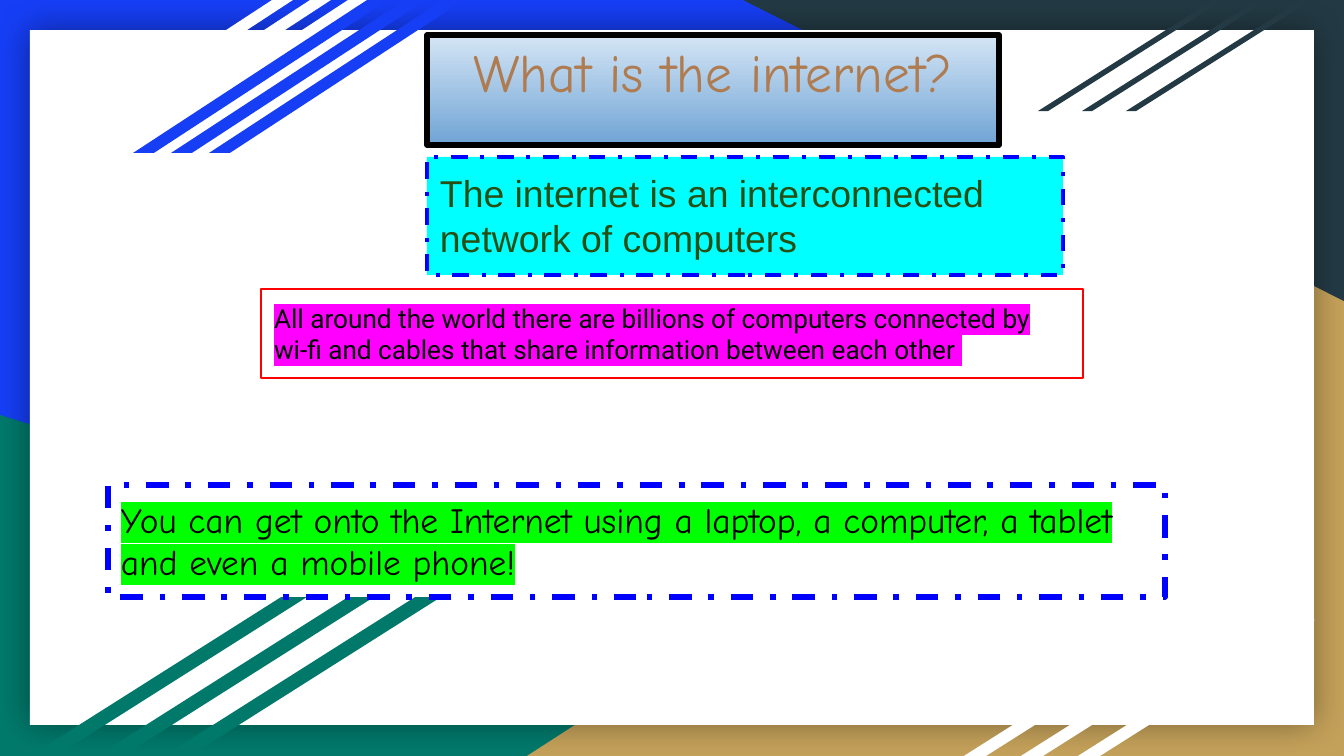
from lxml.etree import SubElement
from pptx import Presentation
from pptx.dml.color import RGBColor as Rgb
from pptx.enum.dml import MSO_LINE as Dash
from pptx.enum.shapes import MSO_SHAPE as Kind
from pptx.enum.text import MSO_ANCHOR as Anchor, MSO_AUTO_SIZE as Fit, PP_ALIGN as Align
from pptx.oxml.ns import qn
from pptx.util import Emu, Pt

HUE = {
    "blue": "163EF5", "green": "00796B", "gold": "C4A15A", "slate": "233A44",
    "white": "FFFFFF", "black": "000000", "sky": "D4E5F5", "steel": "70A4D5",
    "brown": "AF7B51", "cyan": "00FFFF", "navy": "0000FF", "moss": "274E13",
    "red": "FF0000", "pink": "FF00FF", "lime": "00FF00",
}
CORNERS = [
    ((0, 415, 1083, 341), "green", 0, False),
    ((527, 228, 817, 528), "gold", 0, True),
    ((743, 0, 601, 301), "slate", 180, False),
]
PANEL = (30, 30, 1284, 695)
STRIPES = [
    ((38, 0, 255, 153), 38, 1.53, "white"),
    ((133, 0, 255, 153), 38, 1.53, "blue"),
    ((1038, 1, 184, 110), 44, 1.58, "slate"),
    ((964, 620, 237, 136), 57, 1.58, "white"),
    ((30, 597, 277, 159), 67, 1.58, "green"),
]
NOTES = [
    dict(text="What is the internet?", box=(427, 35, 572, 110),
         fill=("sky", "steel"), line=("black", 3, None),
         font=dict(name="Comic Neue", size=Pt(28.7)), hue="brown", mark=None,
         para=dict(alignment=Align.CENTER, line_spacing=0.8),
         frame=dict(vertical_anchor=Anchor.MIDDLE, margin_bottom=38)),
    dict(text="The internet is an interconnected network of computers",
         box=(427, 157, 636, 118),
         fill=("cyan",), line=("navy", 2.25, Dash.DASH_DOT),
         font=dict(name="Arial", size=Pt(20)), hue="moss", mark=None),
    dict(text="All around the world there are billions of computers connected by "
              "wi-fi and cables that share information between each other ",
         box=(261, 289, 822, 89),
         fill=(), line=("red", 0.75, None),
         font=dict(name="Roboto", size=Pt(14)), hue="black", mark="pink"),
    dict(text="You can get onto the Internet using a laptop, a computer, a tablet "
              "and even a mobile phone!",
         box=(108, 485, 1057, 112),
         fill=(), line=("navy", 3, Dash.DASH_DOT),
         font=dict(name="Comic Neue", size=Pt(19)), hue="black", mark="lime"),
]
PAD = 13


def px(n):
    return Emu(round(n * 914400 / 134.4))


def rgb(hue):
    return Rgb.from_string(HUE[hue])


def assign(part, vals):
    for key, val in vals.items():
        setattr(part, key, val)


def paint(fill, hues):
    if not hues:
        fill.background()
    elif len(hues) == 1:
        fill.solid()
        fill.fore_color.rgb = rgb(hues[0])
    else:
        fill.gradient()
        fill.gradient_angle = 270
        for stop, hue, pos in zip(fill.gradient_stops, hues, (0, 1)):
            stop.color.rgb = rgb(hue)
            stop.position = pos


def add(kind, box, hues):
    shape = slide.shapes.add_shape(kind, *map(px, box))
    shape.shadow.inherit = False
    paint(shape.fill, hues)
    shape.line.fill.background()
    return shape


def shade(shape):
    glow = SubElement(shape.element.spPr.find(qn("a:effectLst")), qn("a:outerShdw"),
                      blurRad=str(Pt(18)), dist="0", dir="0", algn="ctr", rotWithShape="0")
    tint = SubElement(glow, qn("a:srgbClr"), val=HUE["black"])
    SubElement(tint, qn("a:alpha"), val="40000")


def mark(run, hue):
    props = run.font.fill._xPr
    light = SubElement(props, qn("a:highlight"))
    SubElement(light, qn("a:srgbClr"), val=HUE[hue])
    props.find(qn("a:solidFill")).addnext(light)


def write(note):
    shape = add(Kind.RECTANGLE, note["box"], note["fill"])
    hue, width, dash = note["line"]
    shape.line.color.rgb = rgb(hue)
    assign(shape.line, dict(width=Pt(width), dash_style=dash))
    form = dict(word_wrap=True, auto_size=Fit.NONE, vertical_anchor=Anchor.TOP)
    form |= {f"margin_{side}": PAD for side in ("left", "top", "right", "bottom")}
    form |= note.get("frame", {})
    frame = shape.text_frame
    assign(frame, {k: px(v) if k.startswith("margin") else v for k, v in form.items()})
    para = frame.paragraphs[0]
    assign(para, dict(alignment=Align.LEFT) | note.get("para", {}))
    run = para.add_run()
    run.text = note["text"]
    assign(run.font, note["font"])
    run.font.color.rgb = rgb(note["hue"])
    if note["mark"]:
        mark(run, note["mark"])


deck = Presentation()
assign(deck, dict(slide_width=px(1344), slide_height=px(756)))
slide = deck.slides.add_slide(deck.slide_layouts[6])
paint(slide.background.fill, ("blue",))

for box, hue, turn, flip in CORNERS:
    corner = add(Kind.RIGHT_TRIANGLE, box, (hue,))
    corner.rotation = turn
    if flip:
        corner.element.spPr.find(qn("a:xfrm")).set("flipH", "1")

shade(add(Kind.RECTANGLE, PANEL, ("white",)))

for (left, top, wide, high), step, slant, hue in STRIPES:
    for i in (2, 1, 0):
        stripe = add(Kind.PARALLELOGRAM, (left + i * step, top, wide, high), (hue,))
        stripe.adjustments[0] = slant

for note in NOTES:
    write(note)

deck.save("out.pptx")
